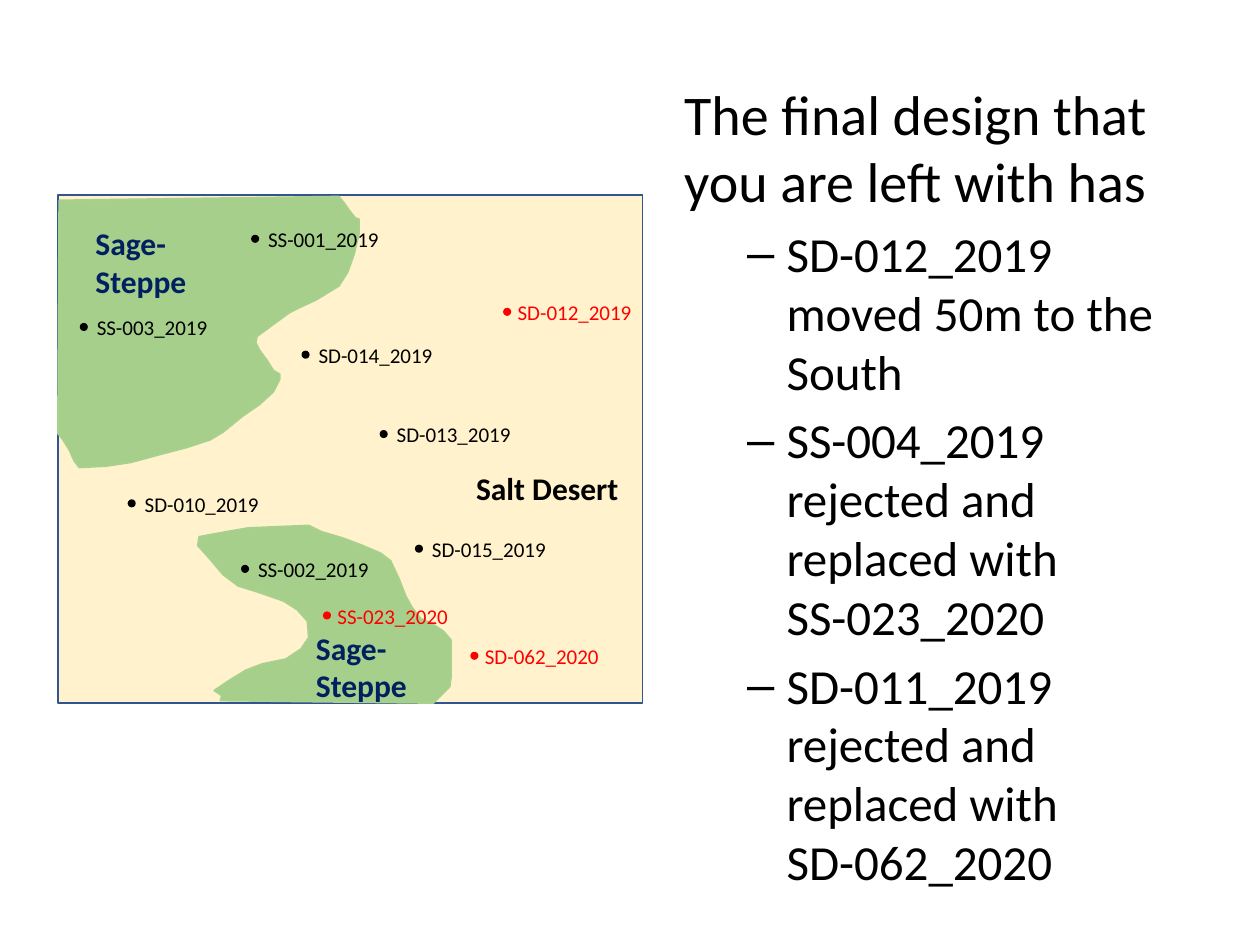
from pptx import Presentation
from pptx.dml.color import RGBColor
from pptx.enum import shapes, text
from pptx.util import Inches, Pt

BLACK = RGBColor(0x00, 0x00, 0x00)
RED = RGBColor(0xFF, 0x00, 0x00)
NAVY = RGBColor(0x00, 0x20, 0x60)
SAND = RGBColor(0xFF, 0xF2, 0xCC)
BORDER_BLUE = RGBColor(0x32, 0x54, 0x91)
SAGE = RGBColor(0xA5, 0xCF, 0x8B)
SAGE_EDGE = RGBColor(0xA9, 0xD1, 0x8E)
FONT = "Calibri"

NORTH_SAGE = [
    (0.01, 0.04), (0, 1.85), (0, 1.89), (0.04, 1.94), (0.09, 2.02), (0.13, 2.11),
    (0.17, 2.16), (0.38, 2.15), (0.58, 2.12), (0.8, 2.06), (1.03, 2), (1.21, 1.94),
    (1.31, 1.88), (1.47, 1.75), (1.6, 1.66), (1.71, 1.56), (1.76, 1.46), (1.76, 1.42),
    (1.71, 1.39), (1.66, 1.31), (1.6, 1.23), (1.57, 1.17), (1.58, 1.12), (1.73, 1.01),
    (1.84, 0.93), (1.92, 0.89), (2.05, 0.83), (2.23, 0.72), (2.3, 0.61), (2.35, 0.47),
    (2.39, 0.3), (2.39, 0.19), (2.36, 0.18), (2.32, 0.13), (2.27, 0.06), (2.23, 0.01),
    (2.21, 0.01),
]
SOUTH_SAGE = [
    (1.29, 4.01), (2.98, 4.03), (3.04, 3.97), (3.11, 3.9), (3.12, 3.82), (3.12, 3.53),
    (3.06, 3.46), (2.97, 3.4), (2.88, 3.36), (2.81, 3.27), (2.76, 3.18), (2.71, 3.05),
    (2.64, 2.9), (2.56, 2.84), (2.42, 2.78), (2.26, 2.72), (2.09, 2.67), (1.99, 2.62),
    (1.51, 2.64), (1.28, 2.68), (1.12, 2.71), (1.11, 2.78), (1.2, 2.88), (1.31, 3.01),
    (1.43, 3.1), (1.59, 3.15), (1.79, 3.22), (1.9, 3.29), (1.98, 3.38), (1.99, 3.51),
    (1.93, 3.6), (1.81, 3.68), (1.62, 3.72), (1.49, 3.77), (1.36, 3.85), (1.24, 3.93),
    (1.3, 3.97),
]
STRATUM_LABELS = [
    ("Sage-Steppe", 1.95, 3.39, NAVY),
    ("Sage-Steppe", 0.2, 0.18, NAVY),
    ("Salt Desert", 3.22, 2.12, BLACK),
]
PLOTS = [
    ("SS-001_2019", 1.54, 0.32, BLACK),
    ("SS-002_2019", 1.46, 2.94, BLACK),
    ("SS-003_2019", 0.18, 1.02, BLACK),
    ("SD-014_2019", 1.94, 1.24, BLACK),
    ("SD-015_2019", 2.84, 2.78, BLACK),
    ("SD-013_2019", 2.56, 1.87, BLACK),
    ("SD-010_2019", 0.56, 2.42, BLACK),
    ("SS-023_2020", 2.11, 3.31, RED),
    ("SD-012_2019", 3.54, 0.9, RED),
    ("SD-062_2020", 3.28, 3.63, RED),
]
CHANGES = [
    "SD-012_2019 moved 50m to the South",
    "SS-004_2019 rejected and replaced with SS-023_2020",
    "SD-011_2019 rejected and replaced with SD-062_2020",
]


def write(paragraph, words, size, color=BLACK, bold=False):
    """Add formatted words to a paragraph."""
    run = paragraph.add_run()
    run.text = words
    run.font.name = FONT
    run.font.size = Pt(size)
    run.font.bold = bold
    run.font.color.rgb = color


def paint(shape, fill, line):
    """Give a shape a plain fill and a thin outline."""
    shape.shadow.inherit = False
    shape.fill.solid()
    shape.fill.fore_color.rgb = fill
    shape.line.color.rgb = line
    shape.line.width = Pt(1)


def add_label(parent, words, left, top, width, height, **style):
    """Place a wrapped text label."""
    label = parent.add_textbox(left, top, width, height)
    label.text_frame.word_wrap = True
    write(label.text_frame.paragraphs[0], words, **style)


def add_patch(parent, outline, left, top):
    """Draw one sage-steppe patch with its outline relative to the map corner."""
    points = [(left + Inches(x), top + Inches(y)) for x, y in outline]
    builder = parent.build_freeform(*points[0])
    builder.add_line_segments(points[1:], close=True)
    paint(builder.convert_to_shape(), SAGE, SAGE_EDGE)


def add_strata(slide, left, top, width, height):
    """Draw the grouped base map with its strata and their names."""
    strata = slide.shapes.add_group_shape().shapes
    desert = strata.add_shape(shapes.MSO_SHAPE.RECTANGLE, left, top, width, height)
    paint(desert, SAND, BORDER_BLUE)
    for outline in (NORTH_SAGE, SOUTH_SAGE):
        add_patch(strata, outline, left, top)
    for words, x, y, color in STRATUM_LABELS:
        add_label(strata, words, left + Inches(x), top + Inches(y),
                  Inches(1.34), Inches(0.28), size=18, color=color, bold=True)


def add_plots(slide, left, top):
    """Mark every sampling plot with a dot and its code."""
    dot_size = Inches(0.05)
    for code, x, y, color in PLOTS:
        dot_left, dot_top = left + Inches(x), top + Inches(y)
        dot = slide.shapes.add_shape(shapes.MSO_SHAPE.OVAL, dot_left, dot_top,
                                     dot_size, dot_size)
        paint(dot, color, color)
        gap = Inches(0.01 if color == RED else 0.03)
        add_label(slide.shapes, code, dot_left + gap, dot_top - Inches(0.12),
                  Inches(2.56), Inches(0.3), size=12, color=color)


def add_summary(slide, left, top, width, height):
    """Fill the body placeholder with the list of design changes."""
    body = slide.placeholders[1]
    body.left, body.top, body.width, body.height = left, top, width, height
    frame = body.text_frame
    frame.auto_size = text.MSO_AUTO_SIZE.NONE
    intro = frame.paragraphs[0]
    properties = intro._p.get_or_add_pPr()
    properties.set("marL", "0")
    properties.set("indent", "0")
    properties.insert_element_before(
        properties.makeelement(
            "{http://schemas.openxmlformats.org/drawingml/2006/main}buNone", {}),
        "a:tabLst", "a:defRPr", "a:extLst")
    write(intro, "The final design that you are left with has", size=32)
    for change in CHANGES:
        item = frame.add_paragraph()
        item.level = 1
        write(item, change, size=28)


def main():
    """Build the slide and save it."""
    deck = Presentation()
    deck.slide_width, deck.slide_height = Inches(10), Inches(7.5)
    slide = deck.slides.add_slide(deck.slide_layouts[1])
    title = slide.shapes.title.element
    title.getparent().remove(title)
    map_left, map_top = Inches(0.46), Inches(1.55)
    add_summary(slide, Inches(5.33), Inches(0.58), Inches(4.17), Inches(6.12))
    add_strata(slide, map_left, map_top, Inches(4.64), Inches(4.03))
    add_plots(slide, map_left, map_top)
    deck.save("out.pptx")


if __name__ == "__main__":
    main()
